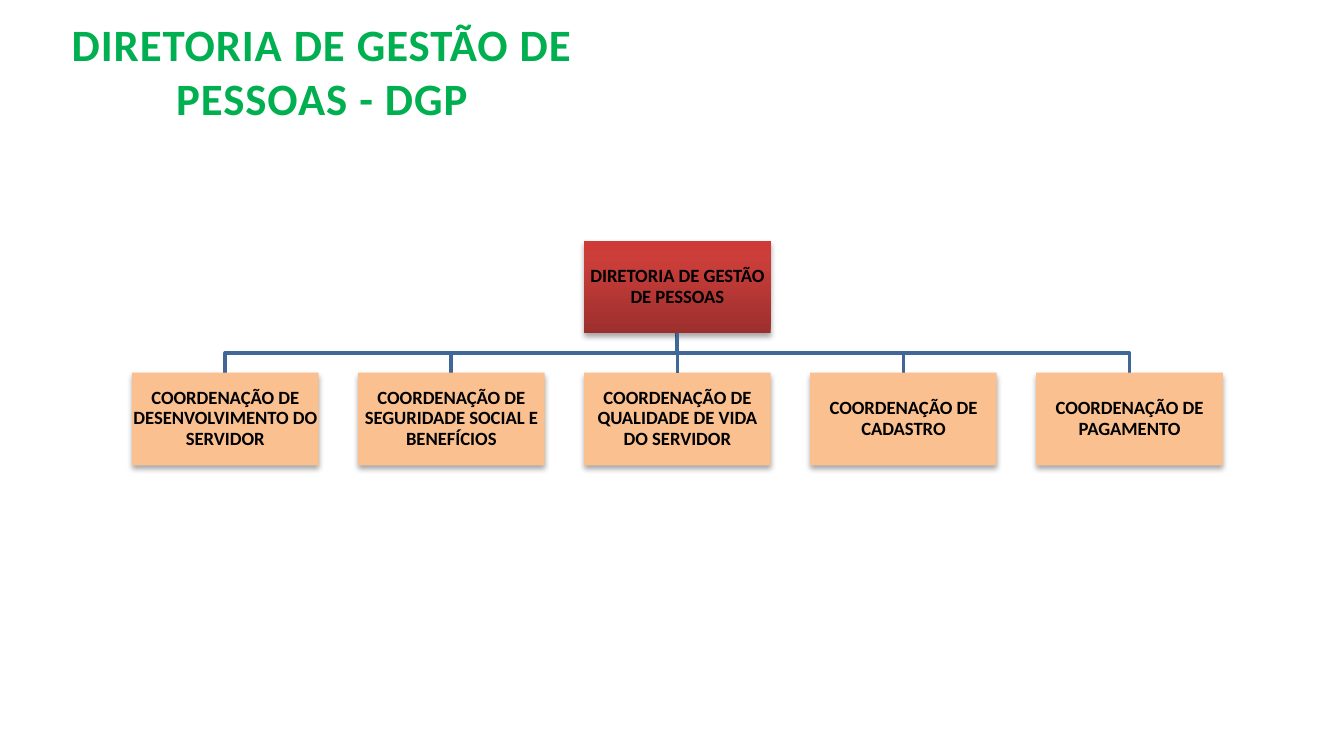
import copy
import dataclasses

import pptx
import pptx.dml.color
import pptx.enum.shapes
import pptx.enum.text
import pptx.oxml
import pptx.oxml.ns
import pptx.oxml.xmlchemy
import pptx.util

Pt = pptx.util.Pt
qn = pptx.oxml.ns.qn


@dataclasses.dataclass(frozen=True)
class Theme:
    font: str = "Calibri"
    green: str = "00B050"
    black: str = "000000"
    peach: str = "FAC090"
    blue: str = "3F6797"
    reds: tuple = ((0, "9C2F2D"), (0.8, "CB3E3A"), (1, "CE3B37"))
    head: float = 24
    label: float = 10
    line: float = 2


THEME = Theme()
WIDE, HIGH = 100, 49.7
LEFT, STEP = 70.7, 121.1
TOP, ROW = 128.9, 199.6
HEAD = "DIRETORIA DE GESTÃO DE PESSOAS - DGP"
ROOT = "DIRETORIA DE GESTÃO DE PESSOAS"
UNITS = [
    "COORDENAÇÃO DE DESENVOLVIMENTO DO SERVIDOR",
    "COORDENAÇÃO DE SEGURIDADE SOCIAL E BENEFÍCIOS",
    "COORDENAÇÃO DE QUALIDADE DE VIDA DO SERVIDOR",
    "COORDENAÇÃO DE CADASTRO",
    "COORDENAÇÃO DE PAGAMENTO",
]


def color(code):
    return pptx.dml.color.RGBColor.from_string(code)


def write(shape, text, size, ink, inset=None, lead=None, track=None):
    frame = shape.text_frame
    frame.word_wrap = True
    frame.vertical_anchor = pptx.enum.text.MSO_ANCHOR.MIDDLE
    if inset is not None:
        frame.margin_left = frame.margin_right = Pt(inset)
        frame.margin_top = frame.margin_bottom = Pt(inset)
    para = frame.paragraphs[0]
    para.alignment = pptx.enum.text.PP_ALIGN.CENTER
    if lead:
        para.line_spacing = lead
    run = para.add_run()
    run.text = text
    run.font.name = THEME.font
    run.font.size = Pt(size)
    run.font.bold = True
    run.font.color.rgb = color(ink)
    if track:
        run._r.get_or_add_rPr().set("spc", str(int(track * 100)))


def shade(shape):
    shape.shadow.inherit = False
    effects = shape._element.spPr.find(qn("a:effectLst"))
    effects.append(pptx.oxml.parse_xml(
        '<a:outerShdw xmlns:a="http://schemas.openxmlformats.org/drawingml/2006/main" '
        f'blurRad="{Pt(3.1)}" dist="{Pt(1.8)}" dir="5400000" rotWithShape="0">'
        f'<a:srgbClr val="{THEME.black}"><a:alpha val="35000"/></a:srgbClr>'
        '</a:outerShdw>'))


def blend(shape, stops):
    fill = shape.fill
    fill.gradient()
    fill.gradient_angle = 90
    holder = shape._element.spPr.find(".//" + qn("a:gsLst"))
    holder.append(copy.deepcopy(holder[-1]))
    for stop, (place, code) in zip(fill.gradient_stops, stops):
        stop.position = place
        stop.color.rgb = color(code)


def add_box(slide, left, top, text, root=False):
    box = slide.shapes.add_shape(
        pptx.enum.shapes.MSO_SHAPE.RECTANGLE,
        Pt(left), Pt(top), Pt(WIDE), Pt(HIGH))
    if root:
        blend(box, THEME.reds)
    else:
        box.fill.solid()
        box.fill.fore_color.rgb = color(THEME.peach)
    box.line.fill.background()
    shade(box)
    write(box, text, THEME.label, THEME.black, inset=0.7, lead=0.9)
    return box


def stroke(line):
    line.color.rgb = color(THEME.blue)
    line.width = Pt(THEME.line)


def add_elbow(slide, start, end):
    middle = (TOP + HIGH + ROW) / 2
    route = slide.shapes.build_freeform(Pt(start), Pt(TOP + HIGH))
    points = [(start, middle), (end, middle), (end, ROW)]
    route.add_line_segments([(Pt(x), Pt(y)) for x, y in points], close=False)
    elbow = route.convert_to_shape()
    elbow.fill.background()
    elbow.shadow.inherit = False
    stroke(elbow.line)


def add_link(slide, upper, lower):
    link = slide.shapes.add_connector(
        pptx.enum.shapes.MSO_CONNECTOR.STRAIGHT, 0, 0, 0, 0)
    link.begin_connect(upper, 2)
    link.end_connect(lower, 0)
    stroke(link.line)
    link._element.spPr.append(pptx.oxml.xmlchemy.OxmlElement("a:effectLst"))


def add_title(slide):
    title = slide.shapes.title
    title.left, title.top = Pt(0), Pt(5)
    title.width, title.height = Pt(345), Pt(65.5)
    write(title, HEAD, THEME.head, THEME.green, track=0.5)
    title.text_frame.auto_size = pptx.enum.text.MSO_AUTO_SIZE.SHAPE_TO_FIT_TEXT


def add_chart(slide):
    center = len(UNITS) // 2
    lefts = [LEFT + STEP * i for i in range(len(UNITS))]
    hub = lefts[center] + WIDE / 2
    for i, left in enumerate(lefts):
        if i != center:
            add_elbow(slide, hub, left + WIDE / 2)
    root = add_box(slide, lefts[center], TOP, ROOT, root=True)
    boxes = [add_box(slide, left, ROW, unit) for left, unit in zip(lefts, UNITS)]
    add_link(slide, root, boxes[center])


def main():
    deck = pptx.Presentation()
    deck.slide_width, deck.slide_height = Pt(720), Pt(405)
    slide = deck.slides.add_slide(deck.slide_layouts[5])
    add_title(slide)
    add_chart(slide)
    deck.save("out.pptx")


if __name__ == "__main__":
    main()
